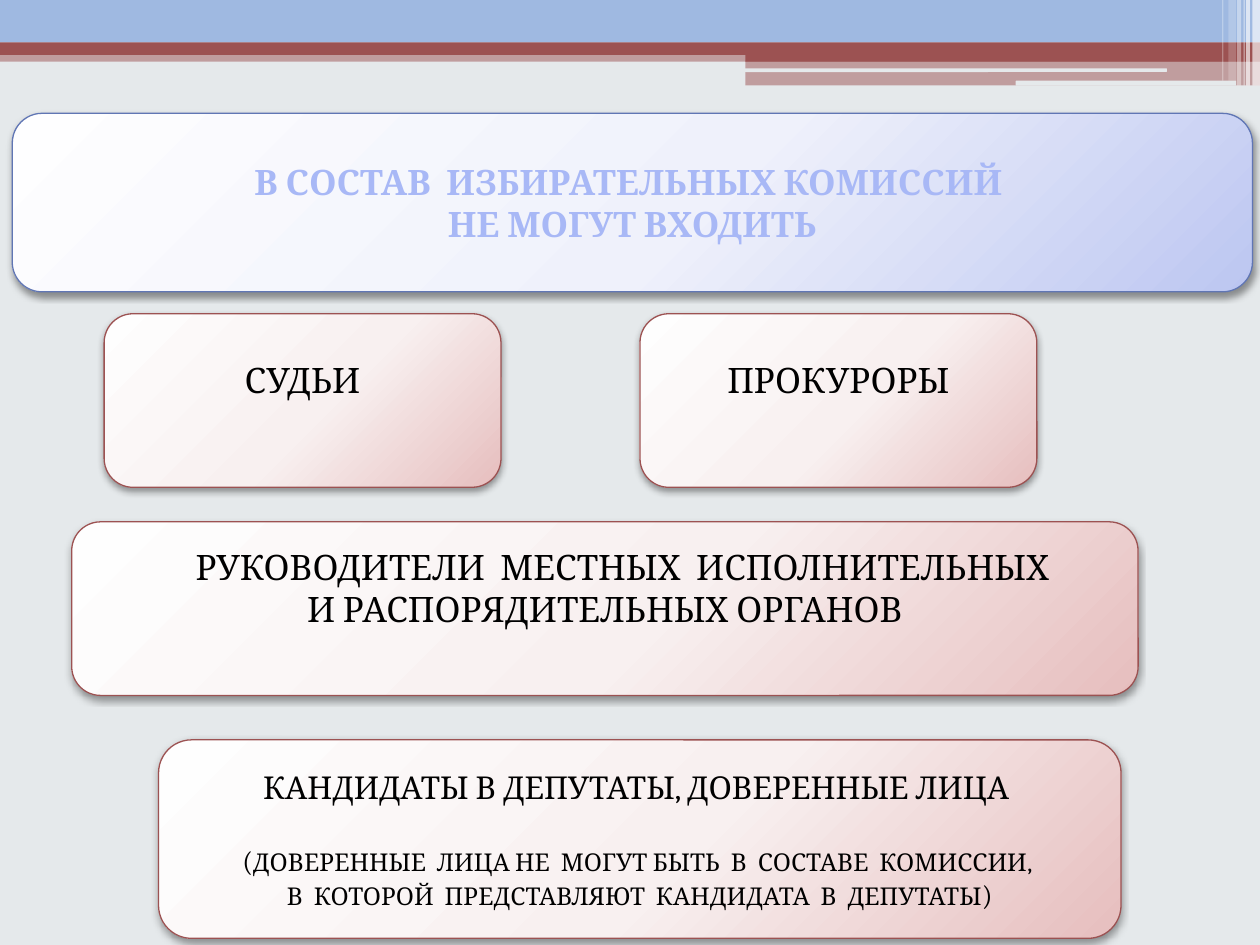
"""Builds a slide listing who may not sit on election commissions."""
from lxml import etree
from pptx import Presentation
from pptx import util as u
from pptx.dml.color import RGBColor
from pptx.enum import shapes, text
from pptx.oxml import parse_xml
from pptx.oxml.ns import nsdecls, qn

BLUE = {"stops": ((0, "FEFEFF"), (55, "EFF1FB"), (100, "BCC6F1")), "line": "6076B4"}
RED = {"stops": ((0, "FEFEFE"), (55, "F8F0F0"), (100, "E6BEBE")), "line": "9C5252"}
TITLE = {"size": 20, "bold": True, "color": "A8B8F6"}
BODY = {"size": 20, "bold": False, "color": "000000"}
HEAD = {**BODY, "size": 18}
NOTE = {**BODY, "size": 14}
PAREN = {**BODY, "size": 16}


def rgb(value):
    return RGBColor.from_string(value)


class Deck:
    def __init__(self, background, font):
        self.font = font
        self.prs = Presentation()
        self.prs.slide_width, self.prs.slide_height = u.Pt(720), u.Pt(540)
        self.s = self.prs.slides.add_slide(self.prs.slide_layouts[6])
        fill = self.s.background.fill
        fill.solid()
        fill.fore_color.rgb = rgb(background)

    def shape(self, kind, box):
        sp = self.s.shapes.add_shape(kind, *(u.Pt(v) for v in box))
        sp.shadow.inherit = False
        return sp

    def bar(self, box, color, alpha=100, rounded=False):
        kind = shapes.MSO_SHAPE.ROUNDED_RECTANGLE if rounded else shapes.MSO_SHAPE.RECTANGLE
        sp = self.shape(kind, box)
        sp.fill.solid()
        sp.fill.fore_color.rgb = rgb(color)
        sp.line.fill.background()
        if alpha < 100:
            clr = sp.fill._xPr.find(qn("a:solidFill"))[0]
            etree.SubElement(clr, qn("a:alpha")).set("val", str(alpha * 1000))

    def card(self, box, theme, paragraphs, bottom=3.6):
        sp = self.shape(shapes.MSO_SHAPE.ROUNDED_RECTANGLE, box)
        self.gradient(sp, theme["stops"])
        sp.line.color.rgb = rgb(theme["line"])
        sp.line.width = u.Pt(0.75)
        self.drop_shadow(sp)
        tf = sp.text_frame
        tf.word_wrap = True
        tf.vertical_anchor = text.MSO_ANCHOR.MIDDLE
        tf.margin_bottom = u.Pt(bottom)
        for i, (runs, after, indent) in enumerate(paragraphs):
            p = tf.add_paragraph() if i else tf.paragraphs[0]
            p.alignment = text.PP_ALIGN.CENTER
            if after:
                p.space_after = u.Pt(after)
            if indent:
                p._p.get_or_add_pPr().set("indent", str(u.Pt(indent)))
            for words, style in runs:
                self.run(p, words, style)

    def run(self, p, words, style):
        for i, line in enumerate(words.split("\n")):
            if i:
                p.add_line_break()
            r = p.add_run()
            r.text = line
            values = {"name": self.font, "size": u.Pt(style["size"]), "bold": style["bold"]}
            for key, value in values.items():
                setattr(r.font, key, value)
            r.font.color.rgb = rgb(style["color"])

    def gradient(self, sp, stops):
        sp.fill.background()
        gs = "".join(f'<a:gs pos="{pos * 1000}"><a:srgbClr val="{c}"/></a:gs>' for pos, c in stops)
        fill = parse_xml(
            f'<a:gradFill {nsdecls("a")} rotWithShape="1"><a:gsLst>{gs}</a:gsLst>'
            '<a:path path="circle"><a:fillToRect l="-40000" t="-90000" r="140000" b="190000"/>'
            "</a:path></a:gradFill>")
        spPr = sp._element.spPr
        spPr.replace(spPr.find(qn("a:noFill")), fill)

    def drop_shadow(self, sp):
        sp._element.spPr.find(qn("a:effectLst")).append(parse_xml(
            f'<a:outerShdw {nsdecls("a")} blurRad="{u.Pt(4.1)}" dist="{u.Pt(2)}" dir="5400000" '
            'rotWithShape="0"><a:srgbClr val="000000"><a:alpha val="40000"/></a:srgbClr>'
            "</a:outerShdw>"))


def main():
    d = Deck("E5E9EB", "Cambria")
    d.bar((0, 28.8, 720, 6.5), "9C5252", 50)
    d.bar((0, 0, 720, 24.2), "9FB9E1")
    d.bar((0, 24.2, 720, 7.2), "9C5252")
    d.bar((426, 28.3, 294, 6.9), "9C5252")
    d.bar((426, 34.6, 294, 14.2), "9C5252", 50)
    d.bar((425.6, 39.1, 241.2, 2.1), "E5E9EB", rounded=True)
    d.bar((580.4, 46.1, 126, 2.9), "E5E9EB", rounded=True)
    for left, width, height, alpha in (
            (715.7, 4.3, 49, 65), (712.1, 2.2, 49, 65), (710.6, 0.72, 49, 60),
            (707, 2.2, 49, 40), (702, 4.3, 46.1, 20), (698.4, 0.72, 46.1, 30)):
        d.bar((left, 0, width, height), "FFFFFF", alpha)

    d.card((7, 64.8, 708.7, 102), BLUE, [
        ([("В СОСТАВ  ИЗБИРАТЕЛЬНЫХ КОМИССИЙ ", TITLE)], 0, 0),
        ([("НЕ МОГУТ ВХОДИТЬ", TITLE)], 0, 0)])
    for left, words in ((59.5, "СУДЬИ"), (365.7, "ПРОКУРОРЫ")):
        d.card((left, 179.3, 226.8, 99.2), RED, [([(words, BODY)], 0, 0)], bottom=28)
    d.card((41, 298.2, 609.4, 99.2), RED, [
        ([("РУКОВОДИТЕЛИ  МЕСТНЫХ  ИСПОЛНИТЕЛЬНЫХ\nИ РАСПОРЯДИТЕЛЬНЫХ ОРГАНОВ", BODY)], 0, 20)],
        bottom=28)
    d.card((90.6, 422.8, 550, 113.4), RED, [
        ([("КАНДИДАТЫ В ДЕПУТАТЫ, ДОВЕРЕННЫЕ ЛИЦА ", HEAD)], 21.8, 0),
        ([("(", PAREN), ("ДОВЕРЕННЫЕ  ЛИЦА НЕ  МОГУТ БЫТЬ  В  СОСТАВЕ  КОМИССИИ, ", NOTE)], 0, 0),
        ([("В  КОТОРОЙ  ПРЕДСТАВЛЯЮТ  КАНДИДАТА  В  ДЕПУТАТЫ", NOTE), (")", PAREN)], 0, 0)])
    d.prs.save("out.pptx")


if __name__ == "__main__":
    main()
